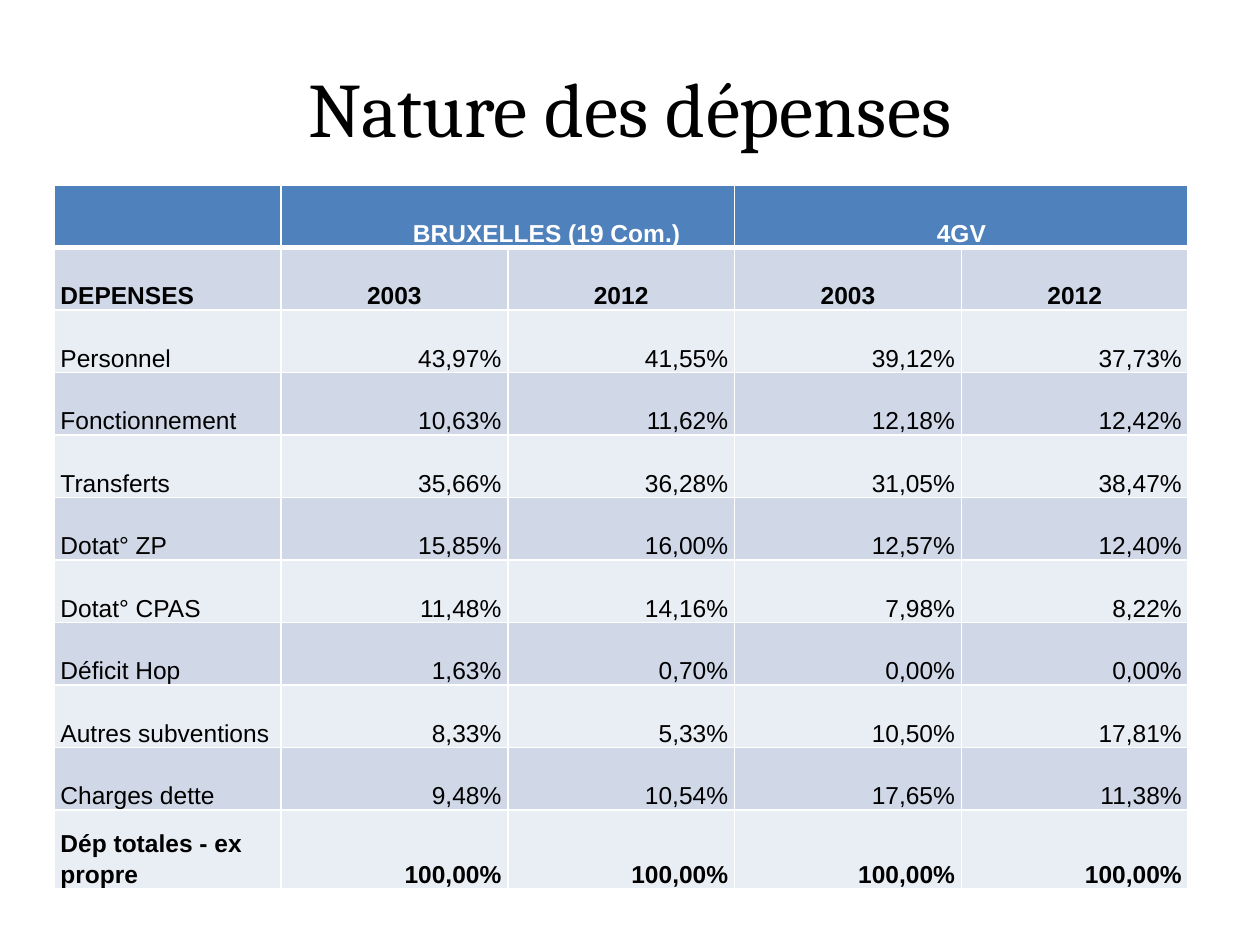
import pptx
import pptx.util
import pptx.dml.color
import pptx.enum.text
import pptx.oxml
import pptx.oxml.ns

Inches, Pt = pptx.util.Inches, pptx.util.Pt
ALIGN = pptx.enum.text.PP_ALIGN
ANCHOR = pptx.enum.text.MSO_ANCHOR

TITLE = "Nature des dépenses"
ROWS = [
    ("", "BRUXELLES (19 Com.)", "", "4GV", ""),
    ("DEPENSES", "2003", "2012", "2003", "2012"),
    ("Personnel", "43,97%", "41,55%", "39,12%", "37,73%"),
    ("Fonctionnement", "10,63%", "11,62%", "12,18%", "12,42%"),
    ("Transferts", "35,66%", "36,28%", "31,05%", "38,47%"),
    ("Dotat° ZP", "15,85%", "16,00%", "12,57%", "12,40%"),
    ("Dotat° CPAS", "11,48%", "14,16%", "7,98%", "8,22%"),
    ("Déficit Hop", "1,63%", "0,70%", "0,00%", "0,00%"),
    ("Autres subventions", "8,33%", "5,33%", "10,50%", "17,81%"),
    ("Charges dette", "9,48%", "10,54%", "17,65%", "11,38%"),
    ("Dép totales - ex propre", "100,00%", "100,00%", "100,00%", "100,00%"),
]
HEADER_FILL, BANDS = "4F81BD", ("E9EDF4", "D0D8E8")
WHITE, BLACK = "FFFFFF", "000000"
LEFT, TOP, WIDTH, HEIGHT = 0.43, 1.47, 9, 5.59
TOTAL_HEIGHT = 0.63
LAST = len(ROWS) - 1


def rgb(color):
    return pptx.dml.color.RGBColor.from_string(color)


def style_run(p, font, size, color, bold=False):
    for r in p.runs:
        r.font.name, r.font.size, r.font.bold = font, Pt(size), bold
        r.font.color.rgb = rgb(color)


def set_borders(cell, **widths):
    """Draw white borders, keyed L, R, T, B, ahead of the fill as the schema asks."""
    tc_pr = cell._tc.get_or_add_tcPr()
    for i, (side, width) in enumerate(widths.items()):
        tc_pr.insert(i, pptx.oxml.parse_xml(
            f'<a:ln{side} {pptx.oxml.ns.nsdecls("a")} w="{Pt(width)}"><a:solidFill>'
            f'<a:srgbClr val="{WHITE}"/></a:solidFill></a:ln{side}>'))


def alignment(row, col):
    if col == 0:
        return ALIGN.LEFT
    if row == 1 or (row, col) == (0, 3):
        return ALIGN.CENTER
    return ALIGN.RIGHT


def fill_cell(cell, row, col, text):
    cell.fill.solid()
    cell.fill.fore_color.rgb = rgb(BANDS[row % 2] if row else HEADER_FILL)
    set_borders(cell, L=1, R=1, T=3 if row == 1 else 1, B=1 if row else 3)
    cell.vertical_anchor = ANCHOR.BOTTOM
    cell.margin_left = cell.margin_right = Inches(0.05)
    cell.margin_top = cell.margin_bottom = 0
    if (row, col) == (0, 1):
        cell.margin_right = Inches(0.43)
    if text:
        cell.text_frame.text = text
        p = cell.text_frame.paragraphs[0]
        p.alignment, p.line_spacing = alignment(row, col), 1.15
        style_run(p, "Arial", 14, BLACK if row else WHITE, row in (0, 1, LAST))


def add_title(s):
    tf = s.shapes.add_textbox(Inches(0.5), Inches(0.3), Inches(9), Inches(1.09)).text_frame
    tf.word_wrap = True
    tf.vertical_anchor = ANCHOR.MIDDLE
    tf.text = TITLE
    tf.paragraphs[0].alignment = ALIGN.CENTER
    style_run(tf.paragraphs[0], "Cambria", 44, BLACK)


def add_expenses(s):
    table = s.shapes.add_table(len(ROWS), len(ROWS[0]), Inches(LEFT), Inches(TOP),
                               Inches(WIDTH), Inches(HEIGHT)).table
    for column in table.columns:
        column.width = Inches(WIDTH / len(ROWS[0]))
    for i, row in enumerate(table.rows):
        row.height = Inches(TOTAL_HEIGHT if i == LAST else (HEIGHT - TOTAL_HEIGHT) / LAST)
    for i, texts in enumerate(ROWS):
        for j, text in enumerate(texts):
            fill_cell(table.cell(i, j), i, j, text)
    for col in (1, 3):
        table.cell(0, col).merge(table.cell(0, col + 1))


def main():
    prs = pptx.Presentation()
    prs.slide_width, prs.slide_height = Inches(10), Inches(7.5)
    s = prs.slides.add_slide(prs.slide_layouts[6])
    add_title(s)
    add_expenses(s)
    prs.save("out.pptx")


if __name__ == "__main__":
    main()
